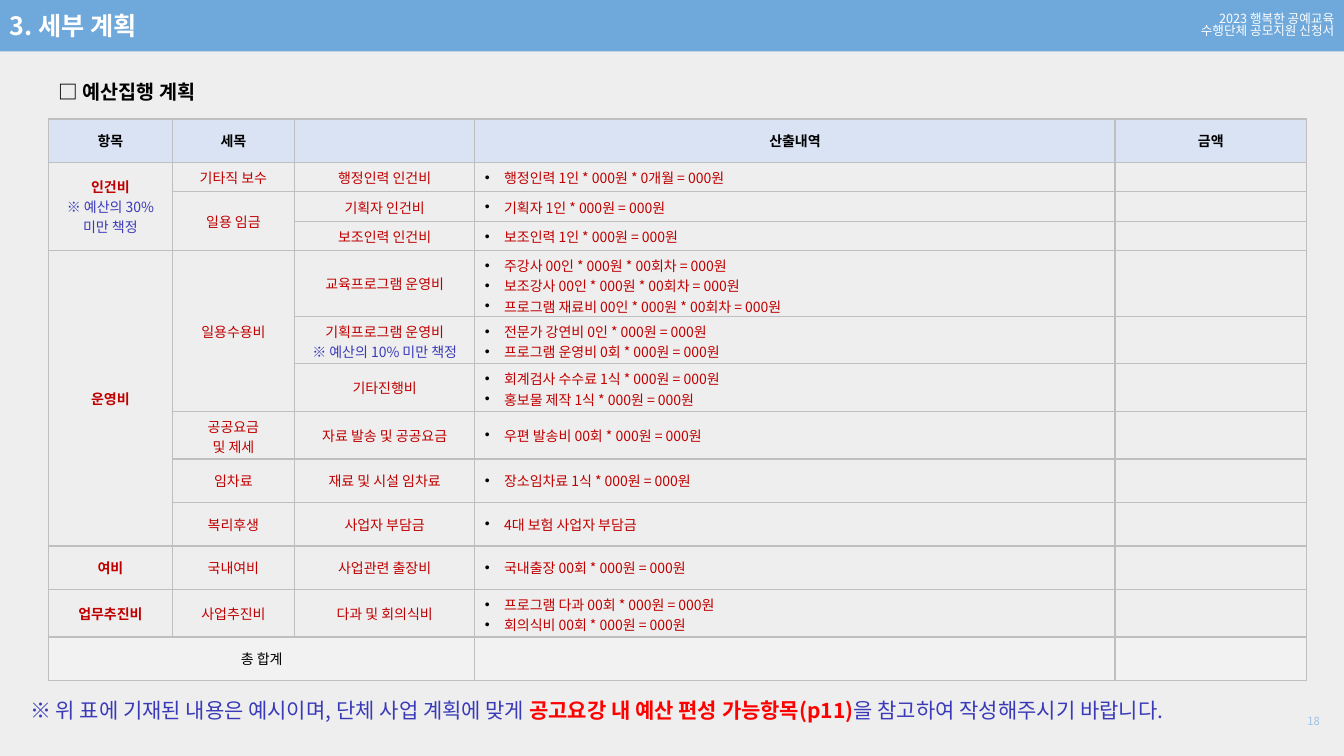
from lxml.etree import SubElement as Sub
from pptx import Presentation
from pptx.dml.color import RGBColor as RGB
from pptx.enum.shapes import MSO_SHAPE as Shape
from pptx.enum.text import MSO_ANCHOR as Anchor, PP_ALIGN as Align
from pptx.oxml.ns import qn
from pptx.util import Inches, Pt

FONT = "Noto Sans CJK KR"
GROUND = RGB(0xEE, 0xEE, 0xEE)
SKY = RGB(0x6F, 0xA8, 0xDB)
PALE = RGB(0xDA, 0xE3, 0xF3)
LIGHT = RGB(0xF2, 0xF2, 0xF2)
GRAY = RGB(0xBF, 0xBF, 0xBF)
MIST = RGB(0x9D, 0xC3, 0xE6)
WHITE = RGB(0xFF, 0xFF, 0xFF)
BLACK = RGB(0, 0, 0)
WINE = RGB(0xC0, 0, 0)
RED = RGB(0xFF, 0, 0)
BLUE = RGB(0x3A, 0x3A, 0xB9)


class Deck:
    """Style and current slide; lengths are percent of the slide's size."""

    def __init__(self):
        self.show = Presentation()
        self.show.slide_width = Inches(13.33)
        self.show.slide_height = Inches(7.5)
        self.slide = self.show.slides.add_slide(self.show.slide_layouts[6])
        self.slide.background.fill.solid()
        self.slide.background.fill.fore_color.rgb = GROUND

    def area(self, left, top, wide, high):
        across, down = self.show.slide_width / 100, self.show.slide_height / 100
        return [int(n) for n in (left * across, top * down, wide * across, high * down)]

    def put(self, frame, lines, size, align=Align.LEFT, space=None, dot=False):
        """Each line is a list of (text, colour, bold) runs."""
        for i, line in enumerate(lines):
            para = frame.add_paragraph() if i else frame.paragraphs[0]
            para.alignment = align
            if space:
                para.line_spacing = space
            if dot:
                self.bullet(para)
            for text, color, bold in line:
                run = para.add_run()
                run.text = text
                run.font.size, run.font.bold = Pt(size), bold
                run.font.name, run.font.color.rgb = FONT, color
                Sub(run.font._element, qn("a:ea"), typeface=FONT)

    def bullet(self, para):
        props = para._p.get_or_add_pPr()
        props.set("marL", str(Inches(0.19)))
        props.set("indent", str(-Inches(0.19)))
        tint = Sub(props, qn("a:buClr"))
        Sub(tint, qn("a:srgbClr"), val=str(BLACK))
        Sub(props, qn("a:buFont"), typeface="Arial")
        Sub(props, qn("a:buChar"), char="•")

    def bar(self, box, color, lines, size):
        shape = self.slide.shapes.add_shape(Shape.RECTANGLE, *self.area(*box))
        shape.shadow.inherit = False
        shape.fill.solid()
        shape.fill.fore_color.rgb = color
        shape.line.fill.background()
        shape.text_frame.vertical_anchor = Anchor.MIDDLE
        self.put(shape.text_frame, lines, size, Align.RIGHT, 0.83)

    def text(self, box, line, size, align=Align.LEFT, anchor=Anchor.TOP, wrap=True):
        frame = self.slide.shapes.add_textbox(*self.area(*box)).text_frame
        frame.word_wrap = wrap
        frame.vertical_anchor = anchor
        self.put(frame, [line], size, align)

    def table(self, box, cols, rows):
        left, top, wide, high = self.area(*box)
        frame = self.slide.shapes.add_table(len(rows), len(cols), left, top, wide, high)
        grid = frame.table
        grid.first_row = grid.horz_banding = False
        for col, share in zip(grid.columns, cols):
            col.width = int(wide * share / sum(cols))
        for row, share in zip(grid.rows, rows):
            row.height = int(high * share / sum(rows))
        return grid

    def cell(self, cell, lines, size, fill=None, dot=False):
        cell.vertical_anchor = Anchor.MIDDLE
        self.put(cell.text_frame, lines, size, Align.LEFT if dot else Align.CENTER, dot=dot)
        if not lines:
            Sub(cell.text_frame.paragraphs[0]._p, qn("a:endParaRPr"), sz=str(size * 100))
        props = cell._tc.get_or_add_tcPr()
        for side in ("lnL", "lnR", "lnT", "lnB"):
            edge = Sub(props, qn("a:" + side), w=str(Pt(1)))
            Sub(Sub(edge, qn("a:solidFill")), qn("a:srgbClr"), val=str(GRAY))
        if fill:
            cell.fill.solid()
            cell.fill.fore_color.rgb = fill
        else:
            cell.fill.background()


# Budget rows: item, sub-item, use, breakdown; None continues the cell above
HEAD = ["항목", "세목", "", "산출내역", "금액"]
BUDGET = [
    ("인건비\n※ 예산의 30% 미만 책정", "기타직 보수", "행정인력 인건비",
     "행정인력 1인 * 000원 * 0개월 = 000원"),
    (None, "일용 임금", "기획자 인건비", "기획자 1인 * 000원 = 000원"),
    (None, None, "보조인력 인건비", "보조인력 1인 * 000원 = 000원"),
    ("운영비", "일용수용비", "교육프로그램 운영비",
     "주강사 00인 * 000원 * 00회차 = 000원\n"
     "보조강사 00인 * 000원 * 00회차 = 000원\n"
     "프로그램 재료비 00인 * 000원 * 00회차 = 000원"),
    (None, None, "기획프로그램 운영비\n※ 예산의 10% 미만 책정",
     "전문가 강연비 0인 * 000원 = 000원\n프로그램 운영비 0회 * 000원 = 000원"),
    (None, None, "기타진행비",
     "회계검사 수수료 1식 * 000원 = 000원\n홍보물 제작 1식 * 000원 = 000원"),
    (None, "공공요금\n및 제세", "자료 발송 및 공공요금", "우편 발송비 00회 * 000원 = 000원"),
    (None, "임차료", "재료 및 시설 임차료", "장소임차료 1식 * 000원 = 000원"),
    (None, "복리후생", "사업자 부담금", "4대 보험 사업자 부담금"),
    ("여비", "국내여비", "사업관련 출장비", "국내출장 00회 * 000원 = 000원"),
    ("업무추진비", "사업추진비", "다과 및 회의식비",
     "프로그램 다과 00회 * 000원 = 000원\n회의식비 00회 * 000원 = 000원"),
]
TOTAL = ["총 합계", "", "", "", ""]
COLS = [1.23, 1.21, 1.79, 6.35, 1.9]
ROWS = [0.43] + [0.29] * 3 + [0.65] + [0.47] * 3 + [0.43] * 3 + [0.47, 0.43]


def fill_budget(deck, grid):
    size = 10
    last = len(ROWS) - 1
    # Header and total
    for c, (head, total) in enumerate(zip(HEAD, TOTAL)):
        deck.cell(grid.cell(0, c), [[(head, BLACK, True)]] if head else [], size, PALE)
        deck.cell(grid.cell(last, c), [[(total, BLACK, False)]] if total else [], size, LIGHT)
    grid.cell(last, 0).merge(grid.cell(last, 2))
    # Body
    for r, row in enumerate(BUDGET, 1):
        for c, text in enumerate(row + ("",)):
            lines = []
            for part in (text or "").splitlines():
                note = part.startswith("※")
                lines.append([(part, BLUE if note else WINE, c == 0 and not note)])
            deck.cell(grid.cell(r, c), lines, size, dot=c == 3)
    # Spans over the continued cells
    for c in (0, 1):
        starts = [r for r, row in enumerate(BUDGET, 1) if row[c] is not None] + [last]
        for start, stop in zip(starts, starts[1:]):
            if stop - start > 1:
                grid.cell(start, c).merge(grid.cell(stop - 1, c))


def main():
    deck = Deck()
    # Title bar
    deck.bar((0, 0, 100, 6.8), SKY, [[("2023 행복한 공예교육", WHITE, False)],
                                     [("수행단체 공모지원 신청서", WHITE, False)]], 9)
    deck.text((0, 0.67, 12, 5.33), [("3. 세부 계획", WHITE, True)], 18, wrap=False)
    # Budget plan
    deck.text((3.6, 9.87, 89.27, 4.53), [("□ 예산집행 계획", BLACK, True)], 14)
    fill_budget(deck, deck.table((3.6, 15.75, 93.62, 74.27), COLS, ROWS))
    # Closing note and page number
    deck.text((1.5, 91.6, 96.25, 4.67), [
        ("※ 위 표에 기재된 내용은 예시이며, 단체 사업 계획에 맞게 ", BLUE, False),
        ("공고요강 내 예산 편성 가능항목(p11)", RED, True),
        ("을 참고하여 작성해주시기 바랍니다.", BLUE, False)], 15)
    deck.text((95.5, 92.67, 3.45, 5.33), [("18", MIST, False)], 8, Align.RIGHT, Anchor.MIDDLE)
    deck.show.save("out.pptx")


if __name__ == "__main__":
    main()
